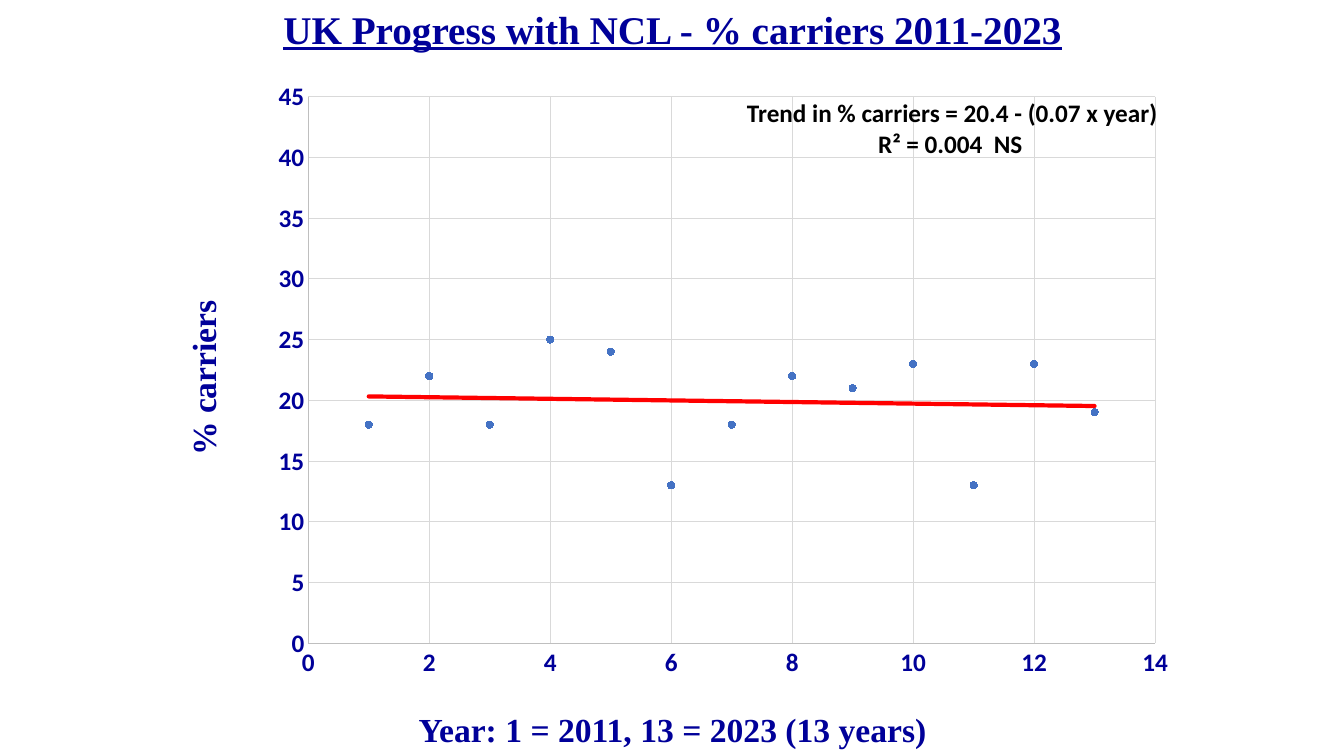
from lxml import etree
from pptx import Presentation
from pptx import util as u
from pptx.chart import data as chart_data
from pptx.dml import color
from pptx.enum import chart as chart_enum
from pptx.enum import text
from pptx.oxml import ns, parse_xml

NAVY = color.RGBColor(0x00, 0x00, 0x99)
BLACK = color.RGBColor(0x00, 0x00, 0x00)
BLUE = color.RGBColor(0x44, 0x72, 0xC4)
RED = color.RGBColor(0xFF, 0x00, 0x00)
AXIS_GREY = color.RGBColor(0xBF, 0xBF, 0xBF)
GRID_GREY = color.RGBColor(0xD9, 0xD9, 0xD9)

CENTER = text.PP_ALIGN.CENTER
RIGHT = text.PP_ALIGN.RIGHT
CARRIERS = [18, 22, 18, 25, 24, 13, 18, 22, 21, 23, 13, 23, 19]

presentation = Presentation()
presentation.slide_width = u.Inches(13.33)
presentation.slide_height = u.Inches(7.5)
slide = presentation.slides.add_slide(presentation.slide_layouts[6])


def add_text(content, left, top, width, height, size=24, font="Times New Roman",
             colour=NAVY, underline=None, alignments=(CENTER,), rotation=0):
    """Add a bold text box with one alignment for each line."""
    shape = slide.shapes.add_textbox(*map(u.Inches, (left, top, width, height)))
    shape.rotation = rotation
    frame = shape.text_frame
    frame.word_wrap = True
    frame.auto_size = text.MSO_AUTO_SIZE.SHAPE_TO_FIT_TEXT
    frame.text = content
    for paragraph, alignment in zip(frame.paragraphs, alignments):
        paragraph.alignment = alignment
        run_font = paragraph.runs[0].font
        run_font.name = font
        run_font.size = u.Pt(size)
        run_font.bold = True
        run_font.underline = underline
        run_font.color.rgb = colour


# Scatter chart of yearly carrier percentages
scatter_data = chart_data.XyChartData()
carrier_points = scatter_data.add_series("Series 1")
for year, percent in enumerate(CARRIERS, start=1):
    carrier_points.add_data_point(year, percent)
chart = slide.shapes.add_chart(
    chart_enum.XL_CHART_TYPE.XY_SCATTER, u.Inches(2.41), u.Inches(0.76),
    u.Inches(9.25), u.Inches(6.22), scatter_data).chart
chart.has_legend = False
chart.has_title = False
chart.font.name = "Calibri"
chart.font.size = u.Pt(10)
chart.font.color.rgb = BLACK
chart.plots[0].vary_by_categories = False

# Axes and gridlines
for axis, maximum, step in ((chart.category_axis, 14, 2), (chart.value_axis, 45, 5)):
    axis.minimum_scale = 0
    axis.maximum_scale = maximum
    axis.major_unit = step
    axis.major_tick_mark = chart_enum.XL_TICK_MARK.NONE
    axis.minor_tick_mark = chart_enum.XL_TICK_MARK.NONE
    axis.has_major_gridlines = True
    for line, grey in ((axis.format.line, AXIS_GREY),
                       (axis.major_gridlines.format.line, GRID_GREY)):
        line.color.rgb = grey
        line.width = u.Pt(0.75)
    labels = axis.tick_labels
    labels.number_format = "General"
    labels.number_format_is_linked = False
    labels.font.name = "Calibri"
    labels.font.size = u.Pt(18)
    labels.font.bold = True
    labels.font.color.rgb = NAVY

# Markers without a joining line
series = chart.plots[0].series[0]
series.smooth = False
series.format.line.fill.background()
series.marker.style = chart_enum.XL_MARKER_STYLE.CIRCLE
series.marker.size = 5
series.marker.format.fill.solid()
series.marker.format.fill.fore_color.rgb = BLUE
series.marker.format.line.color.rgb = BLUE

# Linear trend line
trend_line = parse_xml(
    f'<c:trendline {ns.nsdecls("c", "a")}><c:spPr>'
    f'<a:ln w="{u.Pt(3)}" cap="rnd"><a:solidFill><a:srgbClr val="{RED}"/></a:solidFill></a:ln>'
    '</c:spPr><c:trendlineType val="linear"/>'
    '<c:dispRSqr val="0"/><c:dispEq val="0"/></c:trendline>')
series._element.find(ns.qn("c:xVal")).addprevious(trend_line)

# Fixed inner plot area
plot_area = chart._chartSpace.chart.plotArea
for old_layout in plot_area.findall(ns.qn("c:layout")):
    plot_area.remove(old_layout)
layout = etree.Element(ns.qn("c:layout"))
manual = etree.SubElement(layout, ns.qn("c:manualLayout"))
for tag, value in (("layoutTarget", "inner"), ("xMode", "edge"), ("yMode", "edge"),
                   ("x", 0.07), ("y", 0.032), ("w", 0.908), ("h", 0.872)):
    etree.SubElement(manual, ns.qn(f"c:{tag}"), val=str(value))
plot_area.insert(0, layout)

# Title, axis titles and trend equation
add_text("UK Progress with NCL - % carriers 2011-2023", 1.67, 0, 10, 0.57,
         size=28, underline=True)
add_text("Year: 1 = 2011, 13 = 2023 (13 years)", 1.67, 6.98, 10, 0.5)
add_text("% carriers", -0.63, 3.5, 5.28, 0.5, rotation=270)
add_text("Trend in % carriers = 20.4 - (0.07 x year)\nR² = 0.004  NS",
         7.27, 0.92, 4.31, 0.71, size=18, font="Calibri", colour=BLACK,
         alignments=(RIGHT, CENTER))

presentation.save("out.pptx")
